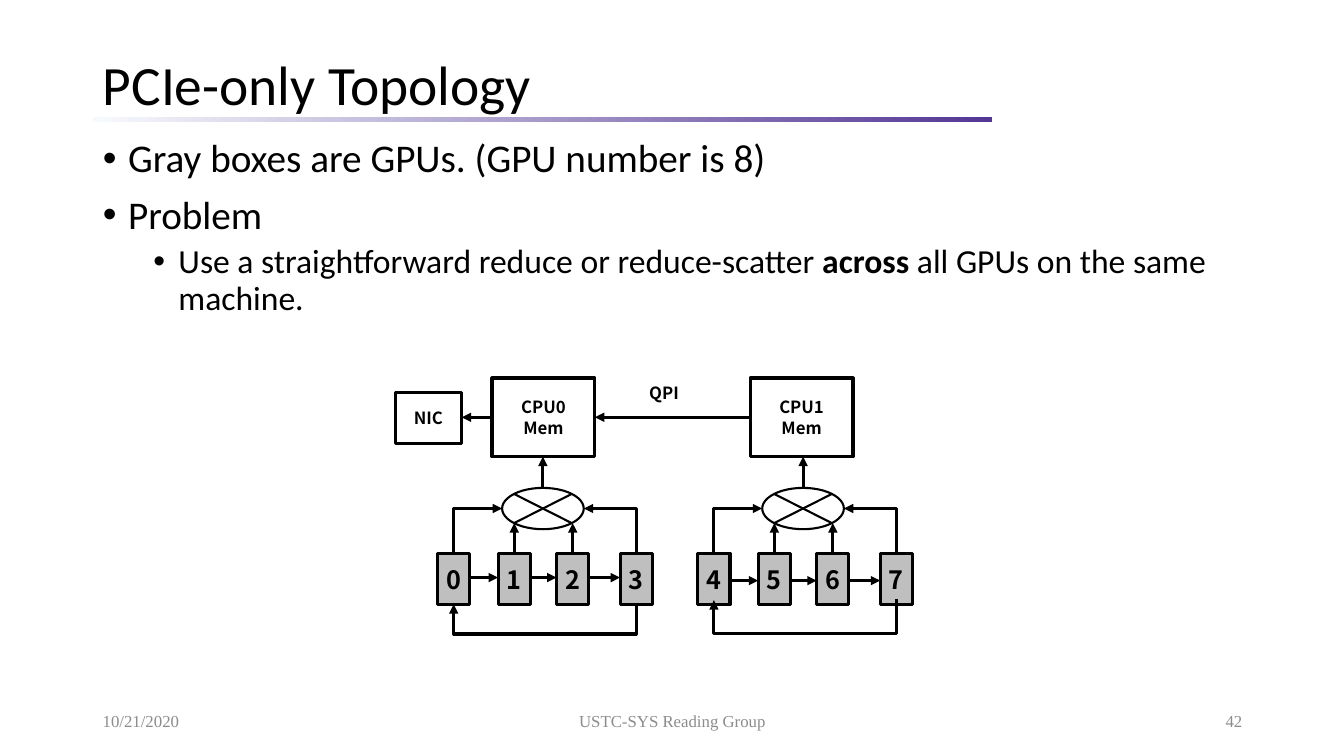
from dataclasses import dataclass

from lxml.etree import SubElement
from pptx import Presentation
from pptx.dml.color import RGBColor
from pptx.enum.shapes import MSO_CONNECTOR as Connector, MSO_SHAPE as Shape
from pptx.enum.text import MSO_ANCHOR as Anchor, MSO_AUTO_SIZE as AutoSize, PP_ALIGN as Align
from pptx.oxml.ns import qn
from pptx.util import Inches, Pt


@dataclass(frozen=True)
class Theme:
    black: str = "000000"
    white: str = "FFFFFF"
    gpu_gray: str = "BFBFBF"
    footer_gray: str = "8C8C8C"
    bar_start: str = "F7FAFD"
    bar_end: str = "543795"
    text_font: str = "Calibri"
    diagram_font: str = "Noto Sans CJK SC"
    footer_font: str = "Times New Roman"
    title_size: float = 39.6
    body_sizes: tuple[int, int] = (28, 24)
    label_size: int = 12
    gpu_size: int = 18
    footer_size: int = 12
    thick: float = 2.25
    thin: float = 1.5


@dataclass(frozen=True)
class Box:
    left: float
    top: float
    width: float
    height: float


@dataclass(frozen=True)
class Bullet:
    runs: tuple[str, ...]
    level: int
    space_before: int


@dataclass(frozen=True)
class Footer:
    text: str
    box: Box
    align: Align


@dataclass(frozen=True)
class Node:
    text: str
    box: Box


@dataclass(frozen=True)
class Cluster:
    first_gpu: int
    offset: float
    row_arrow_y: float
    loop_y: float


THEME = Theme()
BULLETS = (
    Bullet(("Gray boxes are GPUs. (GPU number is 8)",), 0, 0),
    Bullet(("Problem",), 0, 10),
    Bullet(("Use a straightforward reduce or reduce-scatter ", "across",
            " all GPUs on the same machine."), 1, 5),
)
FOOTERS = (
    Footer("10/21/2020", Box(0.92, 6.95, 3, 0.4), Align.LEFT),
    Footer("USTC-SYS Reading Group", Box(4.42, 6.95, 4.5, 0.4), Align.CENTER),
    Footer("42", Box(9.42, 6.95, 3, 0.4), Align.RIGHT),
)
HOSTS = (
    Node("NIC", Box(3.92, 3.89, 0.66, 0.51)),
    Node("CPU0\nMem", Box(4.88, 3.75, 1.02, 0.78)),
    Node("CPU1\nMem", Box(7.44, 3.75, 1.02, 0.78)),
)
CLUSTERS = (Cluster(0, 0, 5.73, 5.99), Cluster(4, 2.58, 5.76, 5.95))
GPU_LEFTS = (4.34, 4.94, 5.52, 6.15)
GPU_TOP, GPU_WIDTH, GPU_HEIGHT = 5.49, 0.32, 0.51
SWITCH = Box(4.98, 4.84, 0.81, 0.41)
HOST_Y, CPU_BOTTOM, LOOP_BOTTOM = 4.14, 4.53, 6.3


def place(shape, box: Box) -> None:
    shape.left, shape.top = Inches(box.left), Inches(box.top)
    shape.width, shape.height = Inches(box.width), Inches(box.height)


def style(paragraph, font_name: str, size: float, color: str, bold: bool = False) -> None:
    for run in paragraph.runs:
        run.font.name = font_name
        run.font.size = Pt(size)
        run.font.bold = bold
        run.font.color.rgb = RGBColor.from_string(color)


def add_title(slide) -> None:
    title = slide.shapes.title
    place(title, Box(0.92, 0.55, 11.5, 0.63))
    frame = title.text_frame
    frame.text = "PCIe-only Topology"
    frame.vertical_anchor = Anchor.MIDDLE
    frame.auto_size = AutoSize.NONE
    paragraph = frame.paragraphs[0]
    paragraph.alignment = Align.LEFT
    paragraph.line_spacing = 0.9
    style(paragraph, THEME.text_font, THEME.title_size, THEME.black)


def add_bar(slide) -> None:
    bar = slide.shapes.add_shape(Shape.RECTANGLE, 0, 0, 0, 0)
    place(bar, Box(0.92, 1.16, 8.92, 0.05))
    bar.shadow.inherit = False
    bar.line.fill.background()
    bar.fill.gradient()
    bar.fill.gradient_angle = 0
    for stop, color, position in zip(bar.fill.gradient_stops, (THEME.bar_start, THEME.bar_end), (0, 1)):
        stop.color.rgb = RGBColor.from_string(color)
        stop.position = position


def add_body(slide) -> None:
    body = slide.placeholders[1]
    place(body, Box(0.92, 1.33, 11.5, 5.43))
    frame = body.text_frame
    frame.auto_size = AutoSize.NONE
    for index, bullet in enumerate(BULLETS):
        paragraph = frame.add_paragraph() if index else frame.paragraphs[0]
        paragraph.level = bullet.level
        paragraph.line_spacing = 0.9
        paragraph.space_before = Pt(bullet.space_before)
        properties = paragraph._p.get_or_add_pPr()
        properties.set("marL", str(Inches(0.25 + 0.5 * bullet.level)))
        properties.set("indent", str(Inches(-0.25)))
        SubElement(properties, qn("a:buFont")).set("typeface", "Arial")
        SubElement(properties, qn("a:buChar")).set("char", "•")
        for text in bullet.runs:
            paragraph.add_run().text = text
        style(paragraph, THEME.text_font, THEME.body_sizes[bullet.level], THEME.black)
        for run in paragraph.runs[1:2]:
            run.font.bold = True


def add_footer(slide, footer: Footer) -> None:
    shape = slide.shapes.add_textbox(0, 0, 0, 0)
    place(shape, footer.box)
    frame = shape.text_frame
    frame.word_wrap = True
    frame.vertical_anchor = Anchor.MIDDLE
    frame.text = footer.text
    frame.paragraphs[0].alignment = footer.align
    style(frame.paragraphs[0], THEME.footer_font, THEME.footer_size, THEME.footer_gray)


def add_node(slide, node: Node, fill: str, size: int, preset=Shape.RECTANGLE,
             line_width: float = THEME.thick) -> None:
    shape = slide.shapes.add_shape(preset, 0, 0, 0, 0)
    place(shape, node.box)
    shape.shadow.inherit = False
    shape.fill.solid()
    shape.fill.fore_color.rgb = RGBColor.from_string(fill)
    shape.line.color.rgb = RGBColor.from_string(THEME.black)
    shape.line.width = Pt(line_width)
    frame = shape.text_frame
    frame.margin_left = frame.margin_right = 0
    frame.vertical_anchor = Anchor.MIDDLE
    frame.text = node.text
    for paragraph in frame.paragraphs:
        paragraph.alignment = Align.CENTER
        style(paragraph, THEME.diagram_font, size, THEME.black, True)


def add_arrow(slide, start: tuple[float, float], end: tuple[float, float],
              kind=Connector.STRAIGHT, arrow_end: str = "a:tailEnd"):
    arrow = slide.shapes.add_connector(kind, *map(Inches, start + end))
    arrow.line.color.rgb = RGBColor.from_string(THEME.black)
    arrow.line.width = Pt(THEME.thick)
    SubElement(arrow.line._get_or_add_ln(), qn(arrow_end)).set("type", "triangle")
    SubElement(arrow._element.spPr, qn("a:effectLst"))
    return arrow


def add_corner_arrow(slide, switch_x: float, switch_y: float, gpu_x: float) -> None:
    arrow = add_arrow(slide, (switch_x, switch_y), (gpu_x, GPU_TOP), Connector.ELBOW, "a:headEnd")
    arrow._element.spPr.find(qn("a:prstGeom")).set("prst", "bentConnector2")


def add_loop_arrow(slide, first_x: float, last_x: float, y: float) -> None:
    depth, half_span, middle = 0.01, (last_x - first_x) / 2, (first_x + last_x) / 2
    arrow = add_arrow(slide, (middle - depth / 2, y - half_span),
                      (middle + depth / 2, y + half_span), Connector.ELBOW)
    properties = arrow._element.spPr
    properties.find(qn("a:xfrm")).set("rot", str(90 * 60000))
    adjustments = properties.find(qn("a:prstGeom")).find(qn("a:avLst"))
    guide = SubElement(adjustments, qn("a:gd"))
    guide.set("name", "adj1")
    guide.set("fmla", f"val {round((LOOP_BOTTOM - y) / depth * 100000)}")


def add_cluster(slide, cluster: Cluster) -> None:
    lefts = [left + cluster.offset for left in GPU_LEFTS]
    centers = [left + GPU_WIDTH / 2 for left in lefts]
    switch_left = SWITCH.left + cluster.offset
    switch_right = switch_left + SWITCH.width
    switch_x, switch_y = switch_left + SWITCH.width / 2, SWITCH.top + SWITCH.height / 2
    add_node(slide, Node("", Box(switch_left, SWITCH.top, SWITCH.width, SWITCH.height)),
             THEME.white, THEME.label_size, Shape.FLOWCHART_SUMMING_JUNCTION, THEME.thin)
    for index, left in enumerate(lefts):
        add_node(slide, Node(str(cluster.first_gpu + index), Box(left, GPU_TOP, GPU_WIDTH, GPU_HEIGHT)),
                 THEME.gpu_gray, THEME.gpu_size)
    for left, following in zip(lefts, lefts[1:]):
        add_arrow(slide, (left + GPU_WIDTH, cluster.row_arrow_y), (following, cluster.row_arrow_y))
    for center in centers[1:3]:
        add_arrow(slide, (center, GPU_TOP), (center, 5.19))
    add_corner_arrow(slide, switch_left, switch_y, centers[0])
    add_corner_arrow(slide, switch_right, switch_y, centers[-1])
    add_loop_arrow(slide, centers[0], centers[-1], cluster.loop_y)
    add_arrow(slide, (switch_x, SWITCH.top), (switch_x, CPU_BOTTOM))


def add_hosts(slide) -> None:
    for host in HOSTS:
        add_node(slide, host, THEME.white, THEME.label_size)
    for target, source in zip(HOSTS, HOSTS[1:]):
        add_arrow(slide, (source.box.left, HOST_Y), (target.box.left + target.box.width, HOST_Y))
    label = slide.shapes.add_textbox(0, 0, 0, 0)
    place(label, Box(6.34, 3.75, 0.62, 0.37))
    label.text_frame.text = "QPI"
    style(label.text_frame.paragraphs[0], THEME.diagram_font, THEME.label_size, THEME.black, True)


def main() -> None:
    presentation = Presentation()
    presentation.slide_width, presentation.slide_height = Inches(13.33), Inches(7.5)
    slide = presentation.slides.add_slide(presentation.slide_layouts[1])
    add_bar(slide)
    add_title(slide)
    add_body(slide)
    for footer in FOOTERS:
        add_footer(slide, footer)
    add_hosts(slide)
    for cluster in CLUSTERS:
        add_cluster(slide, cluster)
    presentation.save("out.pptx")


if __name__ == "__main__":
    main()
